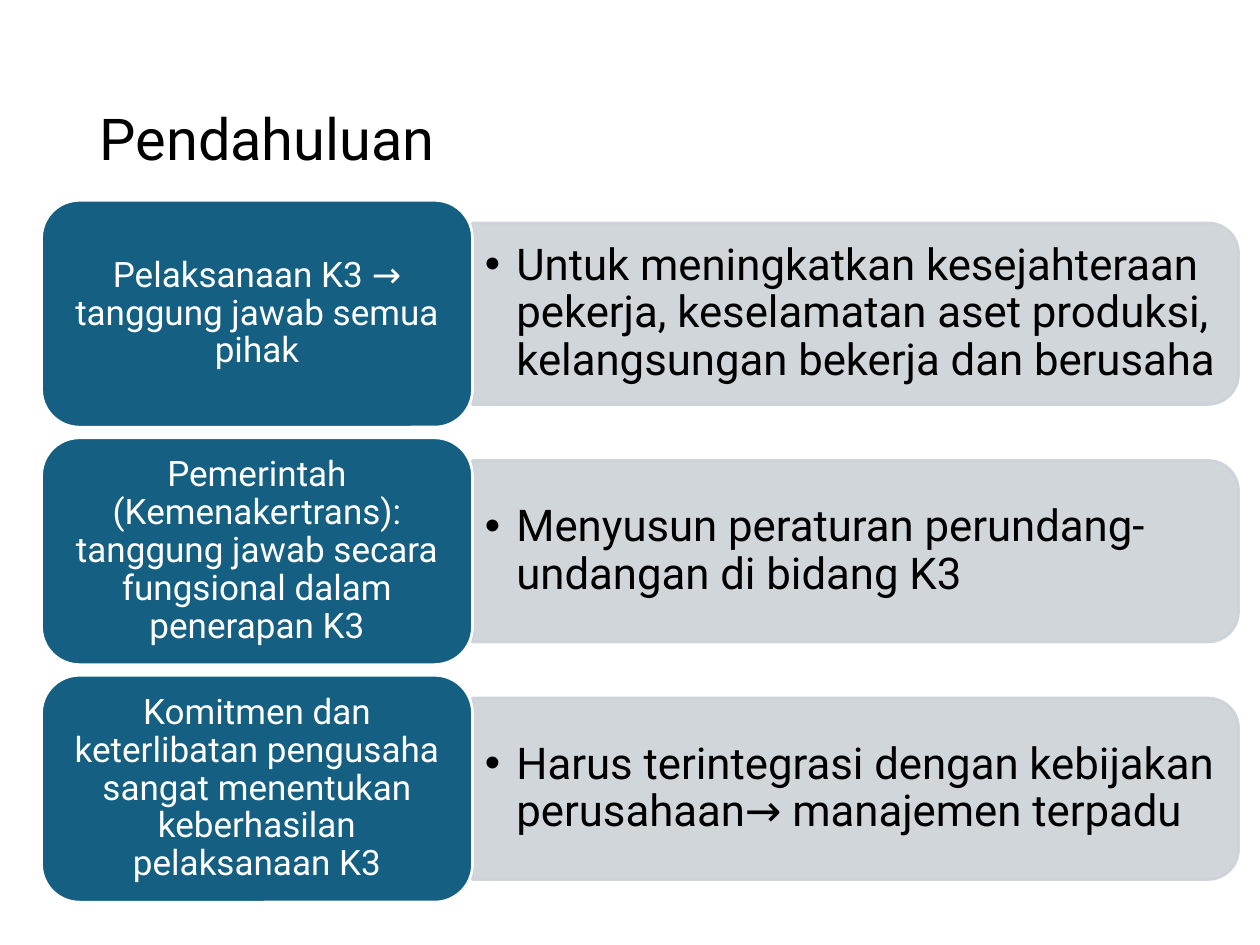
import pptx
import pptx.dml.color
import pptx.enum.shapes
import pptx.enum.text
import pptx.oxml.ns
import pptx.util
from lxml import etree

PX = 9144  # EMU: 100 px to the inch
FONT = "Roboto"
COLORS = {"text": "000000", "label": "156082", "panel": "CCD2D8", "white": "FFFFFF"}
ROWS = [
    ("Pelaksanaan K3 → tanggung jawab semua pihak",
     "Untuk meningkatkan kesejahteraan pekerja, keselamatan aset produksi, "
     "kelangsungan bekerja dan berusaha"),
    ("Pemerintah (Kemenakertrans): tanggung jawab secara fungsional dalam penerapan K3",
     "Menyusun peraturan perundang-undangan di bidang K3"),
    ("Komitmen dan keterlibatan pengusaha sangat menentukan keberhasilan pelaksanaan K3",
     "Harus terintegrasi dengan kebijakan perusahaan→ manajemen terpadu"),
]
ROW_LEFT, ROW_TOP, ROW_WIDTH, ROW_HEIGHT, ROW_PITCH = 33, 159, 950, 180, 188.5
LABEL_WIDTH = 342
PANEL_HEIGHT = 144


def color(name):
    return pptx.dml.color.RGBColor.from_string(COLORS[name])


def emu(*lengths):
    return [pptx.util.Emu(round(length * PX)) for length in lengths]


def write(text_frame, text, size, color_name, alignment, insets):
    """Fill the frame with one vertically centred paragraph and return it."""
    text_frame.text = text
    text_frame.word_wrap = True
    text_frame.auto_size = pptx.enum.text.MSO_AUTO_SIZE.NONE
    text_frame.vertical_anchor = pptx.enum.text.MSO_ANCHOR.MIDDLE
    horizontal, vertical = emu(*insets)
    text_frame.margin_left = text_frame.margin_right = horizontal
    text_frame.margin_top = text_frame.margin_bottom = vertical
    paragraph = text_frame.paragraphs[0]
    paragraph.alignment = alignment
    paragraph.line_spacing = 0.9
    font = paragraph.runs[0].font
    font.name = FONT
    font.size = pptx.util.Pt(size)
    font.color.rgb = color(color_name)
    return paragraph


def add_bullet(paragraph, indent):
    properties = paragraph._p.get_or_add_pPr()
    distance = emu(indent)[0]
    properties.set("marL", str(distance))
    properties.set("indent", str(-distance))
    for tag, attribute, value in (("a:buFont", "typeface", "Arial"), ("a:buChar", "char", "•")):
        etree.SubElement(properties, pptx.oxml.ns.qn(tag)).set(attribute, value)


def set_opacity(shape, percent):
    """Make the solid fill and line of the shape partly transparent."""
    for element in shape._element.spPr.iter(pptx.oxml.ns.qn("a:srgbClr")):
        alpha = etree.SubElement(element, pptx.oxml.ns.qn("a:alpha"))
        alpha.set("val", str(percent * 1000))


def add_block(slide, kind, box, fill_name, line_name):
    shape = slide.shapes.add_shape(kind, *emu(*box))
    shape.shadow.inherit = False
    shape.fill.solid()
    shape.fill.fore_color.rgb = color(fill_name)
    shape.line.color.rgb = color(line_name)
    shape.line.width = pptx.util.Pt(1.5)
    return shape


def add_title(slide, text, box):
    title = slide.shapes.title
    title.left, title.top, title.width, title.height = emu(*box)
    write(title.text_frame, text, 33, "text", pptx.enum.text.PP_ALIGN.LEFT, (10, 5))


def add_panel(slide, text, box):
    """Panel rounded on its right side: a top-rounded shape turned a quarter."""
    left, top, width, height = box
    turned_box = (left + (width - height) / 2, top + (height - width) / 2, height, width)
    panel = add_block(slide, pptx.enum.shapes.MSO_SHAPE.ROUND_2_SAME_RECTANGLE,
                      turned_box, "panel", "panel")
    panel.rotation = 90
    set_opacity(panel, 90)
    text_box = slide.shapes.add_textbox(*emu(left, top + 7, width - 7, height - 14))
    paragraph = write(text_box.text_frame, text, 25, "text",
                      pptx.enum.text.PP_ALIGN.LEFT, (10, 5))
    add_bullet(paragraph, 25)


def add_label(slide, text, box):
    label = add_block(slide, pptx.enum.shapes.MSO_SHAPE.ROUNDED_RECTANGLE,
                      box, "label", "white")
    write(label.text_frame, text, 20, "white", pptx.enum.text.PP_ALIGN.CENTER, (8, 4))


def add_row(slide, label_text, panel_text, box):
    left, top, width, height = box
    add_panel(slide, panel_text, (left + LABEL_WIDTH, top + (height - PANEL_HEIGHT) / 2,
                                  width - LABEL_WIDTH, PANEL_HEIGHT))
    add_label(slide, label_text, (left, top, LABEL_WIDTH, height))


def main():
    presentation = pptx.Presentation()
    presentation.slide_width, presentation.slide_height = emu(1000, 750)
    slide = presentation.slides.add_slide(presentation.slide_layouts[5])
    slide.background.fill.solid()
    slide.background.fill.fore_color.rgb = color("white")
    add_title(slide, "Pendahuluan", (69, 40, 862, 145))
    for index, (label_text, panel_text) in enumerate(ROWS):
        add_row(slide, label_text, panel_text,
                (ROW_LEFT, ROW_TOP + index * ROW_PITCH, ROW_WIDTH, ROW_HEIGHT))
    presentation.save("out.pptx")


if __name__ == "__main__":
    main()
